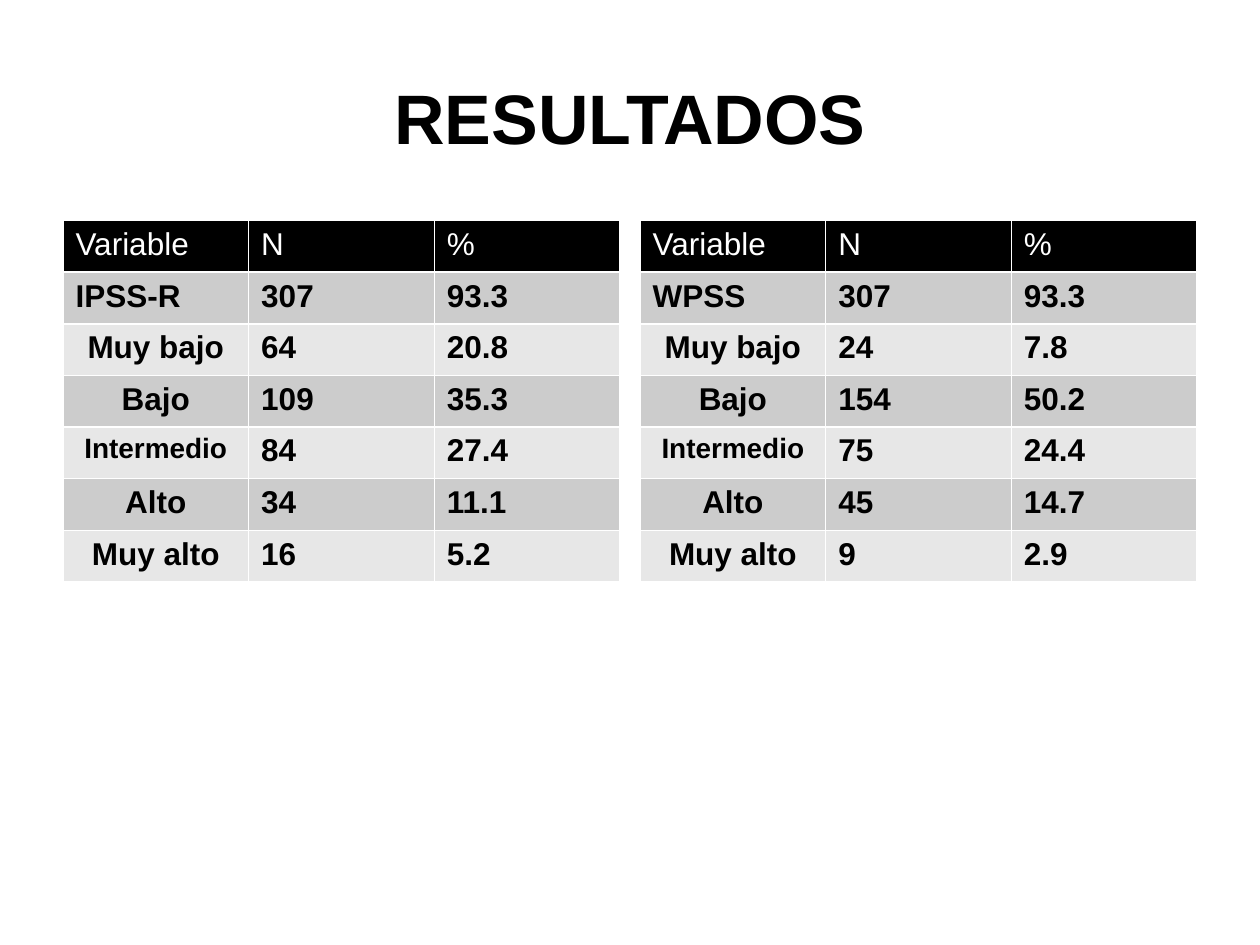
import pptx
import pptx.util
import pptx.dml.color
import pptx.enum.text
from dataclasses import dataclass

TITLE = "RESULTADOS"
HEADER = ("Variable", "N", "%")
TABLES = [
    [
        ("IPSS-R", "307", "93.3"),
        ("Muy bajo", "64", "20.8"),
        ("Bajo", "109", "35.3"),
        ("Intermedio", "84", "27.4"),
        ("Alto", "34", "11.1"),
        ("Muy alto", "16", "5.2"),
    ],
    [
        ("WPSS", "307", "93.3"),
        ("Muy bajo", "24", "7.8"),
        ("Bajo", "154", "50.2"),
        ("Intermedio", "75", "24.4"),
        ("Alto", "45", "14.7"),
        ("Muy alto", "9", "2.9"),
    ],
]


@dataclass(frozen=True)
class Theme:
    font: str = "Arial"
    dark: str = "000000"
    light: str = "FFFFFF"
    bands: tuple = ("CCCCCC", "E7E7E7")
    title_size: int = 40
    body_size: int = 18
    long_label_size: int = 16


THEME = Theme()
ALIGN = pptx.enum.text.PP_ALIGN
WIDTH, HEIGHT = pptx.util.Inches(10), pptx.util.Inches(7.5)
MARGIN = pptx.util.Inches(0.5)
GAP = pptx.util.Inches(0.16)
TABLE_TOP = pptx.util.Inches(1.75)
ROW_HEIGHT = pptx.util.Inches(0.41)
TABLE_WIDTH = (WIDTH - 2 * MARGIN - GAP * (len(TABLES) - 1)) // len(TABLES)


def color(value):
    return pptx.dml.color.RGBColor.from_string(value)


def write(text_frame, text, size=THEME.body_size, ink=THEME.dark, bold=True, align=ALIGN.LEFT):
    paragraph = text_frame.paragraphs[0]
    paragraph.alignment = align
    run = paragraph.add_run()
    run.text = text
    run.font.name = THEME.font
    run.font.size = pptx.util.Pt(size)
    run.font.bold = bold
    run.font.color.rgb = color(ink)


def cell_format(row, column, text):
    if row == 0:
        return {"ink": THEME.light, "bold": False}
    if row > 1 and column == 0:
        size = THEME.long_label_size if text == "Intermedio" else THEME.body_size
        return {"align": ALIGN.CENTER, "size": size}
    return {}


def add_results(slide, left, results):
    rows = [HEADER] + results
    frame = slide.shapes.add_table(
        len(rows), len(HEADER), left, TABLE_TOP, TABLE_WIDTH, ROW_HEIGHT * len(rows)
    )
    for row, values in enumerate(rows):
        fill = THEME.bands[(row - 1) % 2] if row else THEME.dark
        for column, text in enumerate(values):
            cell = frame.table.cell(row, column)
            cell.fill.solid()
            cell.fill.fore_color.rgb = color(fill)
            write(cell.text_frame, text, **cell_format(row, column, text))


def main():
    presentation = pptx.Presentation()
    presentation.slide_width, presentation.slide_height = WIDTH, HEIGHT
    slide = presentation.slides.add_slide(presentation.slide_layouts[5])

    title = slide.shapes.title
    title.left, title.top = MARGIN, pptx.util.Inches(0.3)
    title.width, title.height = WIDTH - 2 * MARGIN, pptx.util.Inches(1.25)
    title.text_frame.vertical_anchor = pptx.enum.text.MSO_ANCHOR.MIDDLE
    write(title.text_frame, TITLE, size=THEME.title_size, align=ALIGN.CENTER)

    for index, results in enumerate(TABLES):
        add_results(slide, MARGIN + index * (TABLE_WIDTH + GAP), results)

    presentation.save("out.pptx")


if __name__ == "__main__":
    main()
